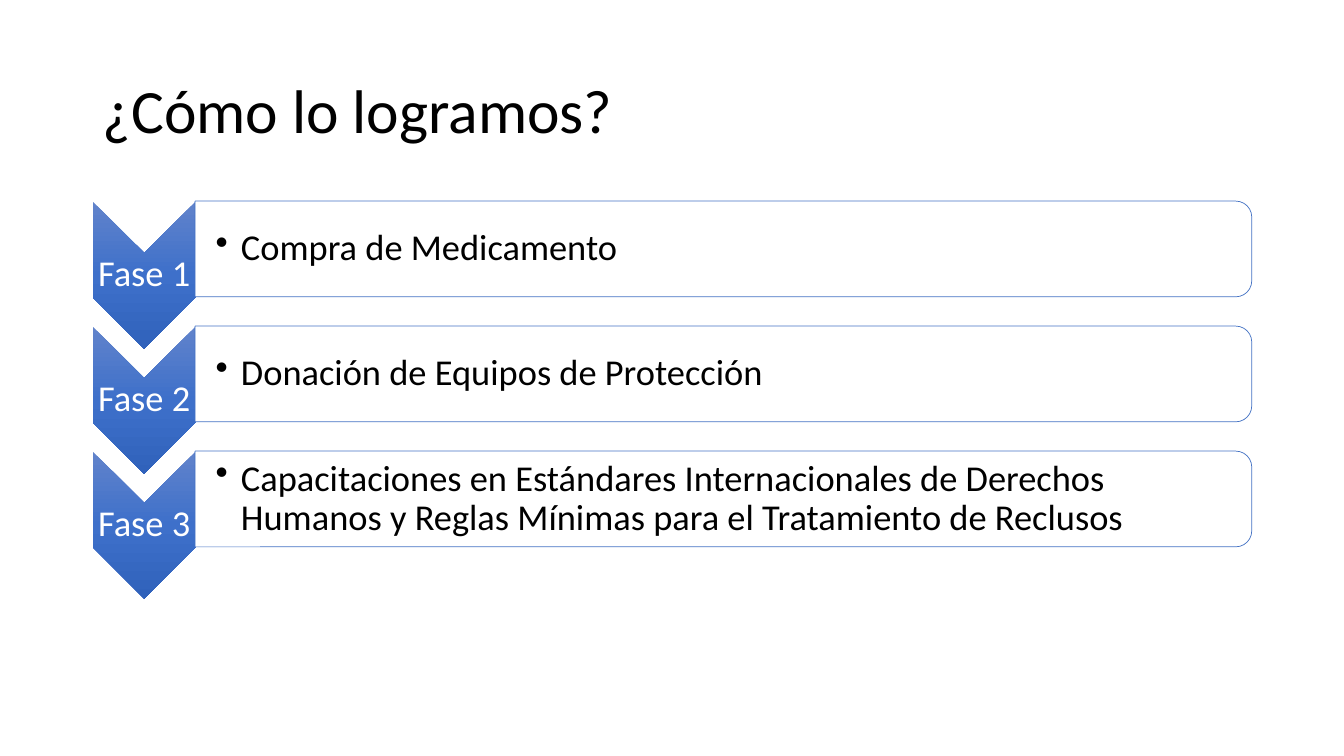
from copy import deepcopy
from dataclasses import dataclass

from lxml.etree import SubElement
from pptx import Presentation
from pptx.dml.color import RGBColor
from pptx.enum.shapes import MSO_SHAPE
from pptx.enum.text import MSO_ANCHOR, MSO_AUTO_SIZE, PP_ALIGN
from pptx.oxml.ns import qn
from pptx.shapes.autoshape import Shape
from pptx.shapes.shapetree import GroupShapes
from pptx.util import Inches, Pt

COLORS = {"ink": "000000", "paper": "FFFFFF", "edge": "4472C4",
          "top": "6183CB", "middle": "3E70CA", "bottom": "3062BB"}
PITCH = 1.24  # distance from one phase to the next


@dataclass
class Box:
    left: float
    top: float
    width: float
    height: float

    def down(self, step: int) -> list[int]:
        """Lengths of the box, moved down by whole steps."""
        top = self.top + step * PITCH
        return [Inches(v) for v in (self.left, top, self.width, self.height)]


@dataclass
class Phase:
    label: str
    task: str


ARROW = Box(0.7, 2.22, 1.46, 1.02)
LABEL = Box(0.92, 2.51, 1.02, 0.44)
BAR = Box(6.7, -2.77, 0.95, 10.48)
TASK = Box(1.94, 2.04, 10.43, 0.86)
TITLE = Box(0.92, 0.4, 11.5, 1.45)

PHASES = [
    Phase("Fase 1", "Compra de Medicamento"),
    Phase("Fase 2", "Donación de Equipos de Protección"),
    Phase("Fase 3", "Capacitaciones en Estándares Internacionales de Derechos "
                    "Humanos y Reglas Mínimas para el Tratamiento de Reclusos"),
]


def color(name: str) -> RGBColor:
    return RGBColor.from_string(COLORS[name])


def apply(target: object, values: dict) -> None:
    for name, value in values.items():
        setattr(target, name, value)


def write(shape: Shape, text: str, size: int, ink: str, align: PP_ALIGN,
          inset: float = 0.02, bullet: bool = False) -> None:
    """Fill a box with one formatted paragraph."""
    frame = shape.text_frame
    frame.text = text
    edge = Inches(0.02)
    apply(frame, {"word_wrap": True, "auto_size": MSO_AUTO_SIZE.NONE,
                  "vertical_anchor": MSO_ANCHOR.MIDDLE,
                  "margin_left": Inches(inset), "margin_right": edge,
                  "margin_top": edge, "margin_bottom": edge})
    para = frame.paragraphs[0]
    apply(para, {"alignment": align, "line_spacing": 0.9})
    if bullet:
        para.level = 1
        props = para._p.get_or_add_pPr()
        props.set("marL", str(Inches(0.25)))
        props.set("indent", str(Inches(-0.25)))
        SubElement(props, qn("a:buChar")).set("char", "•")
    apply(para.font, {"size": Pt(size), "name": "Calibri"})
    para.font.color.rgb = color(ink)


def draw_arrow(shapes: GroupShapes, step: int) -> None:
    """Chevron pointing down, shaded from top to bottom."""
    arrow = shapes.add_shape(MSO_SHAPE.CHEVRON, *ARROW.down(step))
    arrow.rotation = 90
    arrow.shadow.inherit = False
    arrow.line.fill.background()
    arrow.fill.gradient()
    arrow.fill.gradient_angle = 270
    grad = arrow.element.spPr.find(qn("a:gradFill"))
    grad.set("rotWithShape", "0")
    first = grad.find(qn("a:gsLst"))[0]
    first.addnext(deepcopy(first))
    names = ("top", "middle", "bottom")
    for i, (stop, name) in enumerate(zip(arrow.fill.gradient_stops, names)):
        stop.position = i / 2
        stop.color.rgb = color(name)


def draw_bar(shapes: GroupShapes, step: int) -> None:
    """Outlined bar with its right corners rounded."""
    bar = shapes.add_shape(MSO_SHAPE.ROUND_2_SAME_RECTANGLE, *BAR.down(step))
    bar.rotation = 90
    bar.shadow.inherit = False
    bar.fill.solid()
    bar.fill.fore_color.rgb = color("paper")
    tint = bar.element.spPr.find(qn("a:solidFill"))[0]
    SubElement(tint, qn("a:alpha")).set("val", "90000")
    bar.line.color.rgb = color("edge")
    bar.line.width = Pt(0.5)


def draw_phase(shapes: GroupShapes, step: int, phase: Phase) -> None:
    draw_arrow(shapes, step)
    label = shapes.add_textbox(*LABEL.down(step))
    write(label, phase.label, 26, "paper", PP_ALIGN.CENTER)
    draw_bar(shapes, step)
    task = shapes.add_textbox(*TASK.down(step))
    write(task, phase.task, 26, "ink", PP_ALIGN.LEFT, 0.2, bullet=True)


def main() -> None:
    deck = Presentation()
    apply(deck, {"slide_width": Inches(13.33), "slide_height": Inches(7.5)})
    slide = deck.slides.add_slide(deck.slide_layouts[5])

    # Title
    title = slide.shapes.title
    sides = ("left", "top", "width", "height")
    apply(title, dict(zip(sides, TITLE.down(0))))
    write(title, "¿Cómo lo logramos?", 44, "ink", PP_ALIGN.LEFT, 0.1)

    # Phases
    group = slide.shapes.add_group_shape()
    for step, phase in enumerate(PHASES):
        draw_phase(group.shapes, step, phase)

    deck.save("out.pptx")


if __name__ == "__main__":
    main()
